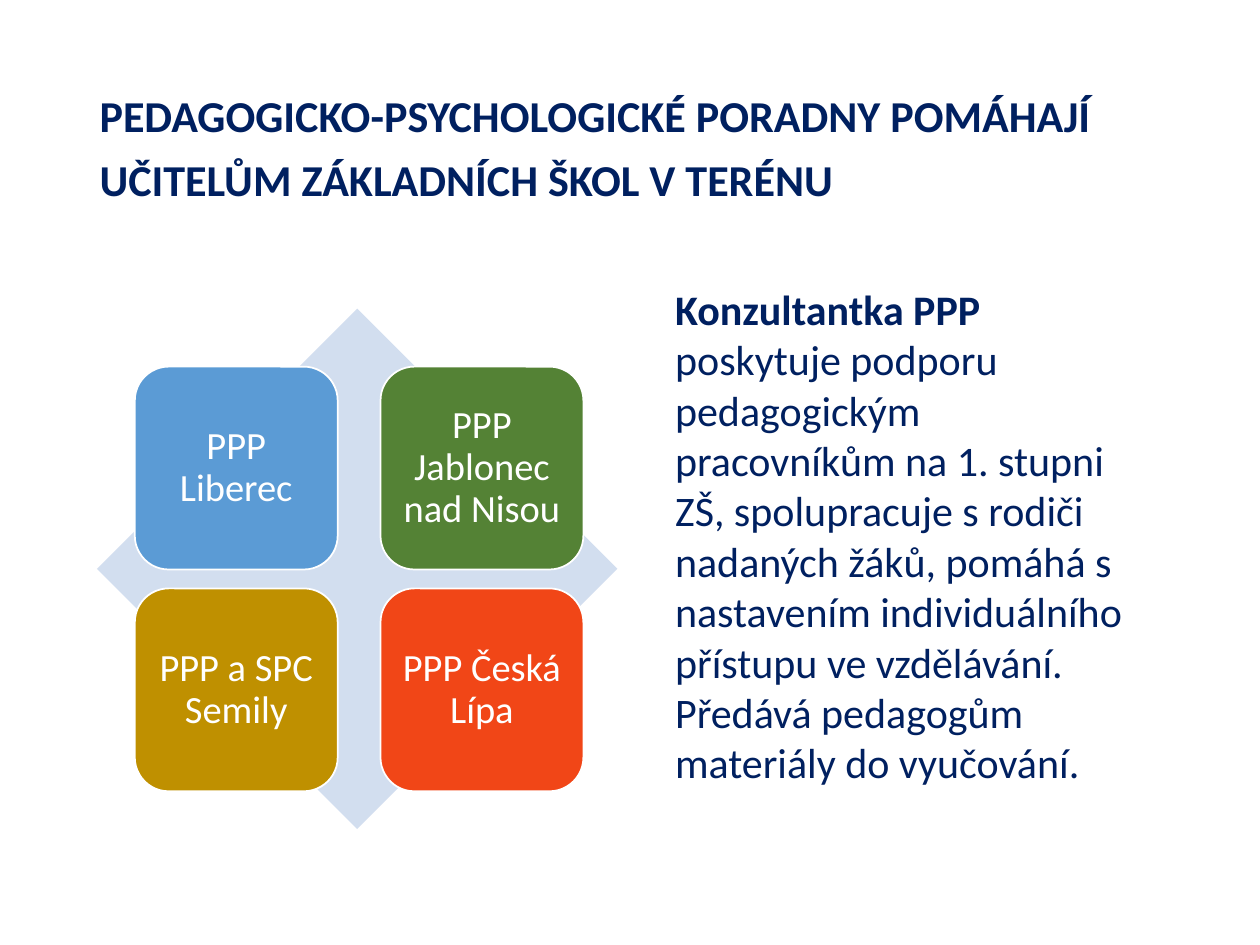
from pptx import Presentation
from pptx.dml.color import RGBColor
from pptx.enum.shapes import MSO_SHAPE as Shape
from pptx.enum.text import MSO_ANCHOR as Anchor, PP_ALIGN as Align
from pptx.util import Inches, Pt

NAVY = RGBColor(0x00, 0x20, 0x60)
WHITE = RGBColor(0xFF, 0xFF, 0xFF)
PALE_BLUE = RGBColor(0xD2, 0xDE, 0xEF)
BLUE = RGBColor(0x5B, 0x9B, 0xD5)
GREEN = RGBColor(0x54, 0x82, 0x35)
GOLD = RGBColor(0xBF, 0x90, 0x00)
RED = RGBColor(0xF1, 0x46, 0x17)

TITLE = ("PEDAGOGICKO-PSYCHOLOGICKÉ PORADNY POMÁHAJÍ\v"
         "UČITELŮM ZÁKLADNÍCH ŠKOL V TERÉNU")
OFFICES = [
    ("PPP Liberec", BLUE),
    ("PPP Jablonec nad Nisou", GREEN),
    ("PPP a SPC Semily", GOLD),
    ("PPP Česká Lípa", RED),
]
# Each paragraph is a list of (text, bold) runs.
DESCRIPTION = [
    [("Konzultantka PPP ", True),
     ("poskytuje podporu pedagogickým pracovníkům na 1. stupni ZŠ, "
      "spolupracuje s rodiči nadaných žáků, pomáhá s nastavením "
      "individuálního přístupu ve vzdělávání.", False)],
    [("Předává pedagogům materiály do vyučování.", False)],
]

CARD_LEFT, CARD_TOP, CARD_SIZE = 1.07, 2.91, 1.61
COLUMN_STEP, ROW_STEP = 1.95, 1.76


def style(paragraph, size, color):
    paragraph.font.name = "Calibri"
    paragraph.font.size = Pt(size)
    paragraph.font.color.rgb = color


def add_filled(slide, kind, left, top, size, color):
    shape = slide.shapes.add_shape(
        kind, Inches(left), Inches(top), Inches(size), Inches(size))
    shape.shadow.inherit = False
    shape.fill.solid()
    shape.fill.fore_color.rgb = color
    shape.line.fill.background()
    return shape


def add_title(slide):
    title = slide.shapes.title
    title.left, title.top = Inches(0.69), Inches(0.4)
    title.width, title.height = Inches(8.62), Inches(1.45)
    frame = title.text_frame
    frame.text = TITLE
    frame.vertical_anchor = Anchor.MIDDLE
    paragraph = frame.paragraphs[0]
    paragraph.alignment = Align.LEFT
    paragraph.line_spacing = 1.2
    style(paragraph, 25.2, NAVY)
    paragraph.font.bold = True


def add_offices(slide):
    add_filled(slide, Shape.DIAMOND, 0.77, 2.45, 4.13, PALE_BLUE)
    for index, (name, color) in enumerate(OFFICES):
        row, column = divmod(index, 2)
        card = add_filled(slide, Shape.ROUNDED_RECTANGLE,
                          CARD_LEFT + column * COLUMN_STEP,
                          CARD_TOP + row * ROW_STEP, CARD_SIZE, color)
        card.line.color.rgb = WHITE
        card.line.width = Pt(1)
        frame = card.text_frame
        frame.margin_left = frame.margin_right = Inches(0.09)
        frame.margin_top = frame.margin_bottom = Inches(0.09)
        frame.vertical_anchor = Anchor.MIDDLE
        frame.text = name
        paragraph = frame.paragraphs[0]
        paragraph.alignment = Align.CENTER
        paragraph.line_spacing = 0.9
        style(paragraph, 22, WHITE)


def add_description(slide):
    box = slide.shapes.add_textbox(
        Inches(5.26), Inches(2.2), Inches(3.93), Inches(4.14))
    frame = box.text_frame
    frame.word_wrap = True
    for index, runs in enumerate(DESCRIPTION):
        paragraph = frame.add_paragraph() if index else frame.paragraphs[0]
        style(paragraph, 24, NAVY)
        for text, bold in runs:
            run = paragraph.add_run()
            run.text = text
            run.font.bold = bold


def main():
    presentation = Presentation()
    presentation.slide_width = Inches(10)
    presentation.slide_height = Inches(7.5)
    slide = presentation.slides.add_slide(presentation.slide_layouts[5])
    add_title(slide)
    add_offices(slide)
    add_description(slide)
    presentation.save("out.pptx")


if __name__ == "__main__":
    main()
